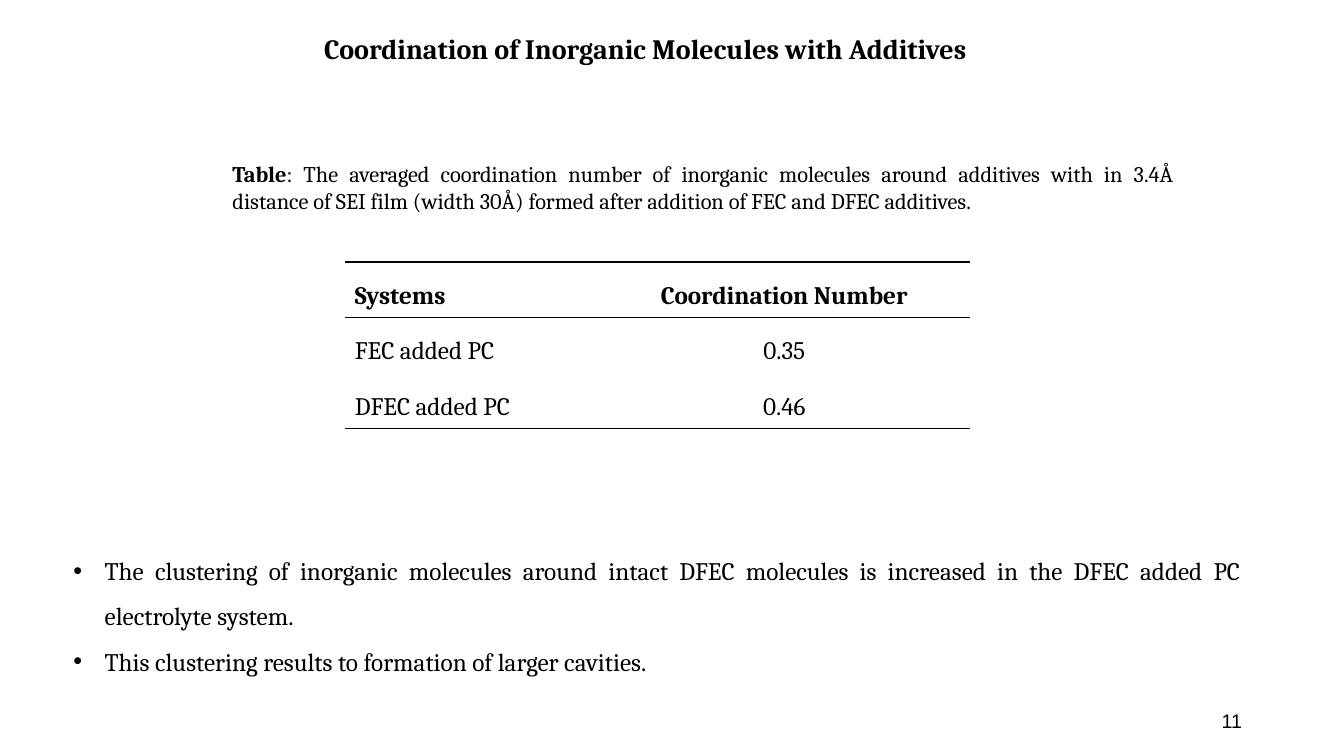
from dataclasses import dataclass

from lxml import etree
from pptx import Presentation
from pptx.dml.color import RGBColor
from pptx.enum.text import MSO_ANCHOR, MSO_AUTO_SIZE, PP_ALIGN
from pptx.oxml.ns import qn
from pptx.slide import Slide
from pptx.table import _Cell as Cell
from pptx.util import Cm, Pt

LEFT, MID, RIGHT, JUST = (PP_ALIGN.LEFT, PP_ALIGN.CENTER,
                          PP_ALIGN.RIGHT, PP_ALIGN.JUSTIFY)
TOP, CENTRE = MSO_ANCHOR.TOP, MSO_ANCHOR.MIDDLE
GROW, FIXED = MSO_AUTO_SIZE.SHAPE_TO_FIT_TEXT, MSO_AUTO_SIZE.NONE


@dataclass(frozen=True)
class Theme:
    ink: str = "000000"
    serif: str = "Cambria"
    sans: str = "Arial"
    title: int = 20
    body: int = 18
    note: int = 16
    page: int = 14
    rule: int = 1


THEME = Theme()


@dataclass(frozen=True)
class Run:
    text: str
    bold: bool = False


@dataclass(frozen=True)
class Block:
    """A text box: frame in cm, then its paragraphs as tuples of runs."""
    frame: tuple[float, float, float, float]
    paras: tuple[tuple[Run, ...], ...]
    size: int
    align: PP_ALIGN = LEFT
    face: str = THEME.serif
    space: float = 1.0
    bullet: bool = False
    anchor: MSO_ANCHOR = TOP
    fit: MSO_AUTO_SIZE = GROW


BLOCKS = (
    Block((7.92, 0.66, 17.27, 1.12),
          ((Run("Coordination of Inorganic Molecules with Additives", True),),),
          THEME.title),
    Block((5.61, 3.91, 24.23, 1.63),
          ((Run("Table", True),
            Run(": The averaged coordination number of inorganic molecules "
                "around additives with in 3.4Å distance of SEI film (width "
                "30Å) formed after addition of FEC and DFEC additives.")),),
          THEME.note, JUST),
    Block((1.6, 13.49, 29.92, 3.58),
          ((Run("The clustering of inorganic molecules around intact DFEC "
                "molecules is increased in the DFEC added PC electrolyte "
                "system."),),
           (Run("This clustering results to formation of larger cavities."),)),
          THEME.body, JUST, space=1.5, bullet=True),
    Block((23.93, 17.65, 7.62, 1.02), ((Run("11"),),),
          THEME.page, RIGHT, THEME.sans, anchor=CENTRE, fit=FIXED),
)

ROWS = (
    ("Systems", "Coordination Number"),
    ("FEC added PC", "0.35"),
    ("DFEC added PC", "0.46"),
)
COLS = (6.4, 9.35)
ALIGNS = (LEFT, MID)
GRID = (8.69, 6.6)
ROW = 1.4


def assign(item: object, values: dict[str, object]) -> None:
    for name, value in values.items():
        setattr(item, name, value)


def write(para, runs: tuple[Run, ...], size: int, face: str,
          align: PP_ALIGN, space: float) -> None:
    assign(para, {"alignment": align, "line_spacing": space})
    for part in runs:
        run = para.add_run()
        run.text = part.text
        assign(run.font, {"name": face, "size": Pt(size), "bold": part.bold})
        run.font.color.rgb = RGBColor.from_string(THEME.ink)


def mark(para) -> None:
    """Give a paragraph a hanging round bullet."""
    props = para._p.get_or_add_pPr()
    hang = Cm(0.79)
    props.set("marL", str(hang))
    props.set("indent", str(-hang))
    etree.SubElement(props, qn("a:buFont")).set("typeface", THEME.sans)
    etree.SubElement(props, qn("a:buChar")).set("char", "•")


def add_block(slide: Slide, block: Block) -> None:
    frame = slide.shapes.add_textbox(*map(Cm, block.frame)).text_frame
    assign(frame, {"word_wrap": True, "auto_size": block.fit,
                   "vertical_anchor": block.anchor})
    for i, runs in enumerate(block.paras):
        para = frame.add_paragraph() if i else frame.paragraphs[0]
        if block.bullet:
            mark(para)
        write(para, runs, block.size, block.face, block.align, block.space)


def rule(cell: Cell, sides: str) -> None:
    """Draw the named sides (of L, R, T, B) and clear the others."""
    props = cell._tc.get_or_add_tcPr()
    for side in "LRTB":
        line = etree.SubElement(props, qn(f"a:ln{side}"))
        if side in sides:
            line.set("w", str(Pt(THEME.rule)))
            fill = etree.SubElement(line, qn("a:solidFill"))
            etree.SubElement(fill, qn("a:srgbClr")).set("val", THEME.ink)
        else:
            etree.SubElement(line, qn("a:noFill"))


def add_grid(slide: Slide) -> None:
    size = (sum(COLS), ROW * len(ROWS))
    table = slide.shapes.add_table(
        len(ROWS), len(COLS), *map(Cm, GRID + size)).table
    assign(table, {"first_row": False, "horz_banding": False})
    for col, width in zip(table.columns, COLS):
        col.width = Cm(width)
    sides = ("TB", "T", "B")
    for r, texts in enumerate(ROWS):
        for c, text in enumerate(texts):
            cell = table.cell(r, c)
            rule(cell, sides[r])
            cell.fill.background()
            write(cell.text_frame.paragraphs[0], (Run(text, r == 0),),
                  THEME.body, THEME.serif, ALIGNS[c], 1.5)


def main() -> None:
    deck = Presentation()
    assign(deck, {"slide_width": Cm(33.87), "slide_height": Cm(19.05)})
    slide = deck.slides.add_slide(deck.slide_layouts[6])
    for block in BLOCKS:
        add_block(slide, block)
    add_grid(slide)
    deck.save("out.pptx")


if __name__ == "__main__":
    main()
